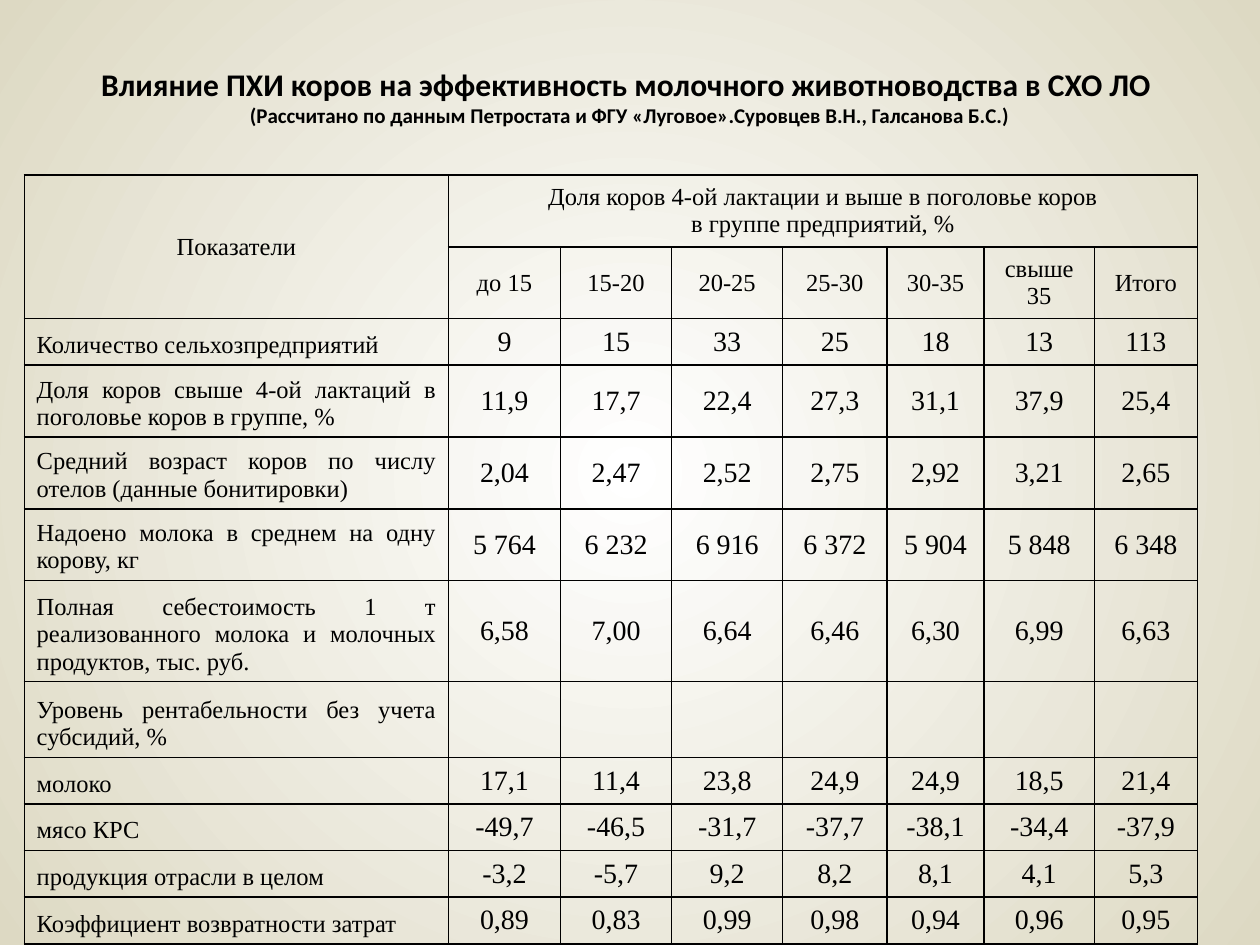
from dataclasses import dataclass

from lxml.etree import SubElement
from pptx import Presentation
from pptx.dml.color import RGBColor
from pptx.enum.text import MSO_ANCHOR as Anchor, PP_ALIGN as Align
from pptx.oxml.ns import qn
from pptx.util import Cm, Pt

BLACK = RGBColor(0x00, 0x00, 0x00)
WHITE = RGBColor(0xFF, 0xFF, 0xFF)
SAND = RGBColor(0xDD, 0xD9, 0xC3)

COLUMN_WIDTHS = [8.55, 2.26, 2.24, 2.24, 2.1, 1.96, 2.22, 2.08]
HEADER_HEIGHT = 1.43
LINE_HEIGHTS = {1: 0.93, 2: 1.43, 3: 2.03}


@dataclass(frozen=True)
class TextStyle:
    size: int
    align: Align = Align.CENTER
    anchor: Anchor = Anchor.MIDDLE
    name: str = "Times New Roman"
    bold: bool = False


@dataclass(frozen=True)
class Indicator:
    label: str
    height: float
    values: str = ""


HEADER = TextStyle(14)
LABEL = TextStyle(14, Align.JUSTIFY, Anchor.BOTTOM)
VALUE = TextStyle(16)
TITLE = TextStyle(18, name="Calibri", bold=True)
SUBTITLE = TextStyle(12, name="Calibri", bold=True)

GROUPS = ["до 15", "15-20", "20-25", "25-30", "30-35", "свыше 35", "Итого"]
ONE, TWO, THREE = LINE_HEIGHTS.values()
INDICATORS = [
    Indicator("Количество сельхозпредприятий", ONE, "9|15|33|25|18|13|113"),
    Indicator("Доля коров свыше 4-ой лактаций в поголовье коров в группе, %",
              TWO, "11,9|17,7|22,4|27,3|31,1|37,9|25,4"),
    Indicator("Средний возраст коров по числу отелов (данные бонитировки)",
              TWO, "2,04|2,47|2,52|2,75|2,92|3,21|2,65"),
    Indicator("Надоено молока в среднем на одну корову, кг",
              TWO, "5 764|6 232|6 916|6 372|5 904|5 848|6 348"),
    Indicator("Полная себестоимость 1 т реализованного молока и молочных "
              "продуктов, тыс. руб.",
              THREE, "6,58|7,00|6,64|6,46|6,30|6,99|6,63"),
    Indicator("Уровень рентабельности без учета субсидий, %", 1.53),
    Indicator("молоко", ONE, "17,1|11,4|23,8|24,9|24,9|18,5|21,4"),
    Indicator("мясо КРС", ONE, "-49,7|-46,5|-31,7|-37,7|-38,1|-34,4|-37,9"),
    Indicator("продукция отрасли в целом", ONE, "-3,2|-5,7|9,2|8,2|8,1|4,1|5,3"),
    Indicator("Коэффициент возвратности затрат", ONE,
              "0,89|0,83|0,99|0,98|0,94|0,96|0,95"),
]


def add_run(paragraph, text: str, style: TextStyle) -> None:
    run = paragraph.add_run()
    run.text = text
    font_format = {"name": style.name, "size": Pt(style.size), "bold": style.bold}
    for attribute, value in font_format.items():
        setattr(run.font, attribute, value)
    run.font.color.rgb = BLACK


def write_cell(cell, text: str, style: TextStyle) -> None:
    cell.vertical_anchor = style.anchor
    for index, line in enumerate(text.split("\n")):
        frame = cell.text_frame
        paragraph = frame.add_paragraph() if index else frame.paragraphs[0]
        paragraph.alignment = style.align
        add_run(paragraph, line, style)


def format_cell(cell) -> None:
    """Give the cell a thin black frame and no fill."""
    margins = {"margin_left": Cm(0.25), "margin_right": Cm(0.25),
               "margin_top": Cm(0.13), "margin_bottom": Cm(0.13)}
    for attribute, value in margins.items():
        setattr(cell, attribute, value)
    properties = cell._tc.get_or_add_tcPr()
    for side in ("a:lnL", "a:lnR", "a:lnT", "a:lnB"):
        line = SubElement(properties, qn(side), w=str(Pt(1)))
        fill = SubElement(line, qn("a:solidFill"))
        SubElement(fill, qn("a:srgbClr"), val=str(BLACK))
    cell.fill.background()


def set_background(slide) -> None:
    """Radial gradient, white in the middle."""
    fill = slide.background.fill
    fill.gradient()
    for stop, color in zip(fill.gradient_stops, (WHITE, SAND)):
        stop.color.rgb = color
    gradient = slide._element.find(".//" + qn("a:gradFill"))
    gradient.remove(gradient.find(qn("a:lin")))
    circle = SubElement(gradient, qn("a:path"), {"path": "circle"})
    SubElement(circle, qn("a:fillToRect"), {side: "50000" for side in "ltrb"})


def add_title(slide) -> None:
    box = slide.shapes.add_textbox(Cm(1.27), Cm(0.76), Cm(22.86), Cm(2.36))
    frame = box.text_frame
    frame.word_wrap = True
    frame.vertical_anchor = TITLE.anchor
    paragraph = frame.paragraphs[0]
    paragraph.alignment = TITLE.align
    add_run(paragraph, "Влияние ПХИ коров на эффективность молочного "
            "животноводства в СХО ЛО ", TITLE)
    paragraph.add_line_break()
    add_run(paragraph, "(Рассчитано по данным Петростата и ФГУ «Луговое».Суровцев "
            "В.Н., Галсанова Б.С.)", SUBTITLE)


def add_indicator_table(slide) -> None:
    heights = [HEADER_HEIGHT] * 2 + [item.height for item in INDICATORS]
    table = slide.shapes.add_table(
        len(heights), len(COLUMN_WIDTHS), Cm(0.49), Cm(3.53),
        Cm(sum(COLUMN_WIDTHS)), Cm(sum(heights))).table
    table.first_row = table.horz_banding = False
    for column, width in zip(table.columns, COLUMN_WIDTHS):
        column.width = Cm(width)
    for row, height in zip(table.rows, heights):
        row.height = Cm(height)
    for cell in table.iter_cells():
        format_cell(cell)

    # Two header rows
    table.cell(0, 0).merge(table.cell(1, 0))
    table.cell(0, 1).merge(table.cell(0, len(GROUPS)))
    write_cell(table.cell(0, 0), "Показатели", HEADER)
    write_cell(table.cell(0, 1), "Доля коров 4-ой лактации и выше в поголовье коров\n"
               "в группе предприятий, %", HEADER)
    for column, group in enumerate(GROUPS, start=1):
        write_cell(table.cell(1, column), group, HEADER)

    # Indicators
    for row, item in enumerate(INDICATORS, start=2):
        write_cell(table.cell(row, 0), item.label, LABEL)
        if item.values:
            for column, value in enumerate(item.values.split("|"), start=1):
                write_cell(table.cell(row, column), value, VALUE)


def main() -> None:
    presentation = Presentation()
    presentation.slide_width, presentation.slide_height = Cm(25.4), Cm(19.05)
    slide = presentation.slides.add_slide(presentation.slide_layouts[6])
    set_background(slide)
    add_title(slide)
    add_indicator_table(slide)
    presentation.save("out.pptx")


if __name__ == "__main__":
    main()
